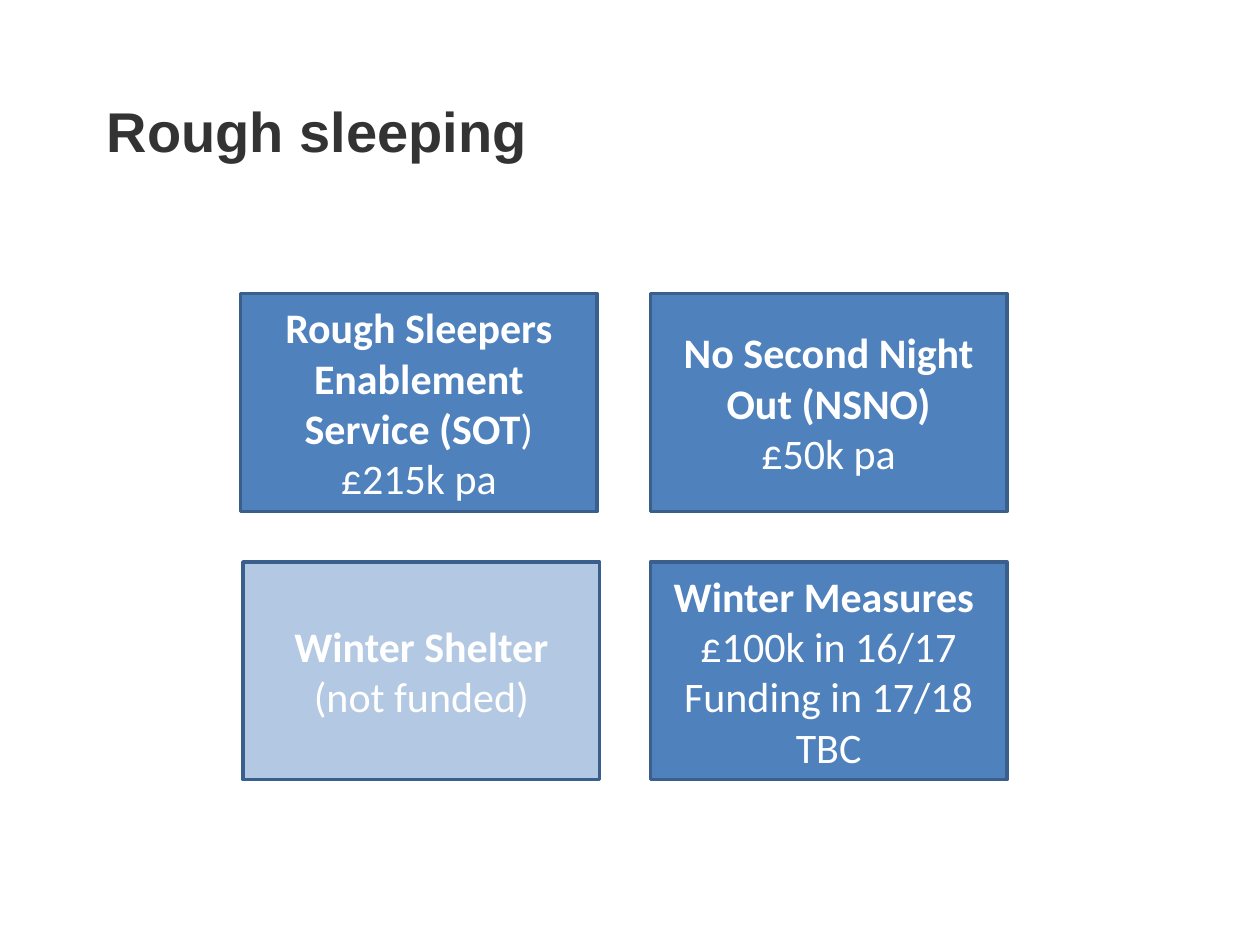
from dataclasses import dataclass

from lxml import etree
from pptx import Presentation
from pptx.dml.color import RGBColor
from pptx.enum.shapes import MSO_SHAPE
from pptx.enum.text import MSO_ANCHOR, PP_ALIGN
from pptx.oxml.ns import qn
from pptx.util import Cm, Pt

RECT = MSO_SHAPE.RECTANGLE
TOP, MIDDLE = MSO_ANCHOR.TOP, MSO_ANCHOR.MIDDLE
LEFT, CENTER = PP_ALIGN.LEFT, PP_ALIGN.CENTER

BLUE, EDGE, WHITE, DARK = "4F81BD", "3A5F8C", "FFFFFF", "333333"
BOX_W, BOX_H = 7.19, 4.39
LEFT_X, RIGHT_X = 4.85, 13.11
ROW_1, ROW_2 = 5.92, 11.33
TITLE_FONT = {"name": "Arial", "size": Pt(32), "bold": True}
BOX_FONT = {"name": "Calibri", "size": Pt(24)}


@dataclass
class Service:
    """A box; each paragraph is a list of (text, bold) runs."""
    x: float
    y: float
    paragraphs: list[list[tuple[str, bool]]]
    opacity: int = 100


SERVICES = [
    Service(LEFT_X, ROW_1, [
        [("Rough Sleepers Enablement Service (SOT", True), (")", False)],
        [("£215k pa", False)]]),
    Service(RIGHT_X, ROW_1, [
        [("No Second Night Out (NSNO)", True)],
        [("£50k pa", False)]]),
    Service(RIGHT_X, ROW_2, [
        [("Winter Measures ", True)],
        [("£100k in 16/17", False)],
        [("Funding in 17/18 TBC", False)]]),
    Service(LEFT_X + 0.05, ROW_2, [
        [("Winter Shelter", True)],
        [("(not funded)", False)]], opacity=43),
]


def rgb(value: str) -> RGBColor:
    return RGBColor.from_string(value)


def set_font(font, values: dict, color: str) -> None:
    for name, value in values.items():
        setattr(font, name, value)
    font.color.rgb = rgb(color)


def add_title(s, text: str) -> None:
    sp = s.shapes.title
    sp.left, sp.top, sp.width, sp.height = Cm(1.9), Cm(1.7), Cm(22.66), Cm(3.18)
    tf = sp.text_frame
    tf.vertical_anchor = TOP
    tf.margin_top = Cm(0.24)
    p = tf.paragraphs[0]
    p.alignment = LEFT
    r = p.add_run()
    r.text = text
    set_font(r.font, TITLE_FONT, DARK)


def add_service(s, service: Service) -> None:
    sp = s.shapes.add_shape(RECT, Cm(service.x), Cm(service.y), Cm(BOX_W), Cm(BOX_H))
    sp.shadow.inherit = False
    sp.fill.solid()
    sp.fill.fore_color.rgb = rgb(BLUE)
    if service.opacity < 100:
        color = sp.fill._xPr.find(qn("a:solidFill"))[0]
        etree.SubElement(color, qn("a:alpha"), val=str(service.opacity * 1000))
    sp.line.color.rgb = rgb(EDGE)
    sp.line.width = Pt(2)

    tf = sp.text_frame
    tf.word_wrap = True
    tf.vertical_anchor = MIDDLE
    for i, runs in enumerate(service.paragraphs):
        p = tf.add_paragraph() if i else tf.paragraphs[0]
        p.alignment = CENTER
        for text, bold in runs:
            r = p.add_run()
            r.text = text
            set_font(r.font, BOX_FONT | {"bold": bold}, WHITE)


def main() -> None:
    prs = Presentation()
    prs.slide_width, prs.slide_height = Cm(25.4), Cm(19.05)
    s = prs.slides.add_slide(prs.slide_layouts[5])  # title only

    # Heading
    add_title(s, "Rough sleeping")

    # Grid of services
    for service in SERVICES:
        add_service(s, service)

    prs.save("out.pptx")


if __name__ == "__main__":
    main()
